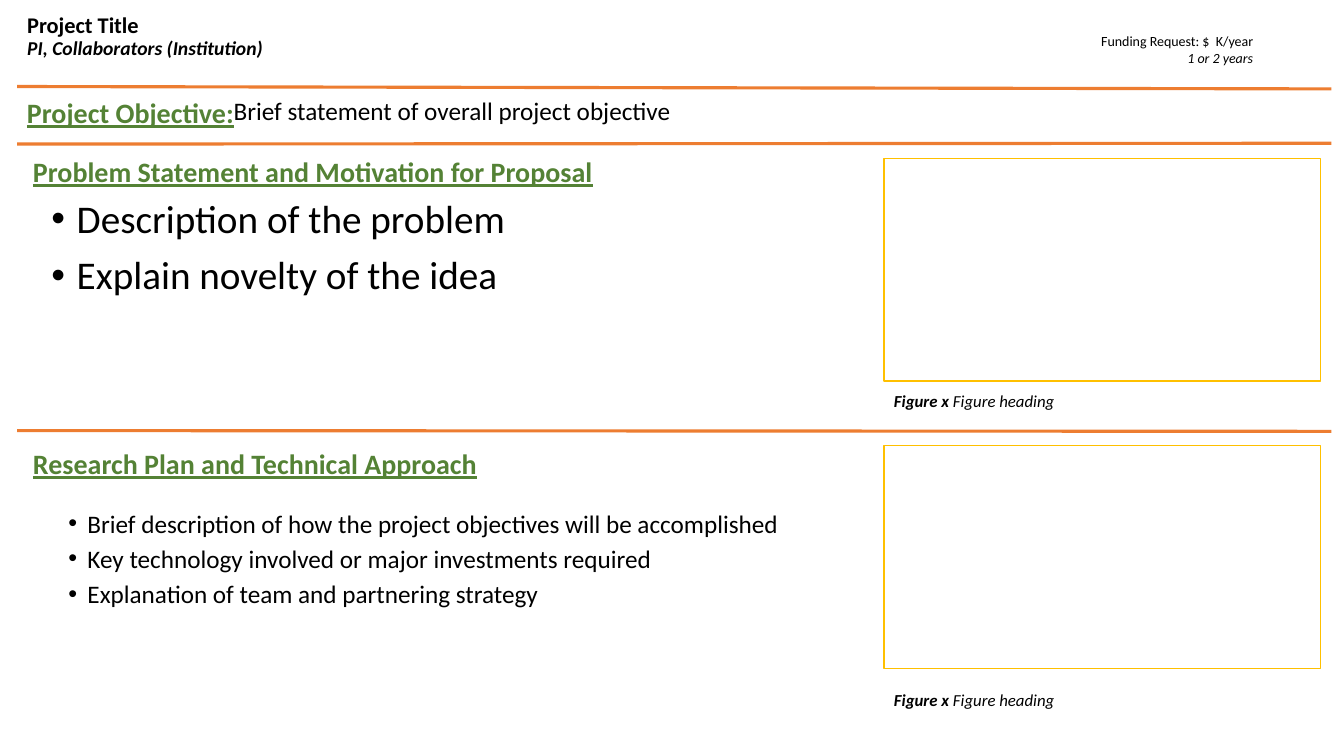
from lxml import etree
from pptx import Presentation
from pptx.dml.color import RGBColor
from pptx.enum.shapes import MSO_CONNECTOR, MSO_SHAPE
from pptx.enum.text import MSO_ANCHOR, MSO_AUTO_SIZE, PP_ALIGN
from pptx.oxml.ns import qn
from pptx.util import Cm, Pt

LEFT, RIGHT = PP_ALIGN.LEFT, PP_ALIGN.RIGHT
TOP, NO_FIT = MSO_ANCHOR.TOP, MSO_AUTO_SIZE.NONE
STRAIGHT, RECTANGLE = MSO_CONNECTOR.STRAIGHT, MSO_SHAPE.RECTANGLE
FONT = "Calibri"
COLORS = {"text": "000000", "heading": "548235", "rule": "ED7D31",
          "frame": "FFC000", "paper": "FFFFFF"}


def color(name):
    """Return the named palette colour."""
    return RGBColor.from_string(COLORS[name])


def place(shape, box):
    """Move a shape to a box given in centimetres."""
    shape.left, shape.top, shape.width, shape.height = (Cm(v) for v in box)


def add_label(slide, box):
    """Add an empty text box."""
    return slide.shapes.add_textbox(*(Cm(v) for v in box))


def write(shape, paragraphs, size=18, ink="text", align=LEFT, spacing=1.0,
          gap=0, indent=None):
    """Fill a shape with paragraphs of (text, font overrides) runs."""
    frame = shape.text_frame
    frame.word_wrap = True
    frame.auto_size = NO_FIT
    frame.vertical_anchor = TOP
    for index, runs in enumerate(paragraphs):
        paragraph = frame.add_paragraph() if index else frame.paragraphs[0]
        paragraph.alignment = align
        paragraph.line_spacing = spacing
        paragraph.space_before = Pt(gap if index else 0)
        if indent:
            properties = paragraph._p.get_or_add_pPr()
            properties.set("marL", str(Cm(indent)))
            properties.set("indent", str(-Cm(indent)))
            etree.SubElement(properties, qn("a:buFont")).set("typeface", "Arial")
            etree.SubElement(properties, qn("a:buChar")).set("char", "•")
        for text, overrides in runs:
            if text == "\n":
                paragraph.add_line_break()
                continue
            run = paragraph.add_run()
            run.text = text
            run.font.name = FONT
            run.font.size = Pt(size)
            run.font.color.rgb = color(ink)
            for attribute, value in overrides.items():
                setattr(run.font, attribute, value)


def add_heading(slide, box, text):
    """Add an underlined green heading."""
    write(add_label(slide, box), [[(text, {"bold": True, "underline": True})]],
          size=20, ink="heading")


def add_rule(slide, left, right, left_y, right_y):
    """Add an orange dividing line across the slide."""
    rule = slide.shapes.add_connector(
        STRAIGHT, Cm(right), Cm(right_y), Cm(left), Cm(left_y))
    rule.line.color.rgb = color("rule")
    rule.line.width = Pt(2.25)
    etree.SubElement(rule._element.spPr, qn("a:effectLst"))


def add_header(slide, box):
    """Place the project title and the funding request."""
    left, top, width, height = box
    title = slide.shapes.title
    place(title, (left, top, 20.27, height))
    write(title, [[("Project Title", {"bold": True}), ("\n", {}),
                   ("PI, Collaborators (Institution)",
                    {"size": Pt(14), "bold": True, "italic": True})]],
          size=16, spacing=0.9)
    funding = add_label(slide, (left + width - 5.08, top + 0.46, 5.08, 1.12))
    write(funding, [[("Funding Request: $  K/year", {})],
                    [("1 or 2 years", {"italic": True})]], size=10, align=RIGHT)


def add_objective(slide, box):
    """Place the objective heading and its statement."""
    left, top, width, height = box
    add_heading(slide, (left, top, 5.89, 1.12), "Project Objective:")
    statement = add_label(slide, (left + 5.21, top, width - 5.21, height))
    write(statement, [[("Brief statement of overall project objective", {})]])


def add_section(slide, box, heading, points, body, offset, **style):
    """Place a heading and its bullet list in the given body placeholder."""
    left, top, width, height = box
    dx, dy = offset
    add_heading(slide, (left, top, 16.33, 1.12), heading)
    place(body, (left + dx, top + dy, width - dx, height - dy))
    write(body, [[(point, {})] for point in points], **style)


def add_figure(slide, box, caption_gap):
    """Place a figure frame with its caption below."""
    left, top, width, height = box
    frame = slide.shapes.add_shape(RECTANGLE, *(Cm(v) for v in box))
    frame.shadow.inherit = False
    frame.fill.solid()
    frame.fill.fore_color.rgb = color("paper")
    frame.line.color.rgb = color("frame")
    frame.line.width = Pt(1)
    caption = add_label(slide, (left, top + height + caption_gap, 8.05, 0.76))
    write(caption, [[("Figure x", {"bold": True, "italic": True}),
                     (" Figure heading", {"italic": True})]], size=12)


def main():
    """Build and save the project proposal slide."""
    deck = Presentation()
    deck.slide_width, deck.slide_height = Cm(33.87), Cm(19.05)
    slide = deck.slides.add_slide(deck.slide_layouts[3])
    problem, plan = slide.placeholders[1], slide.placeholders[2]

    add_header(slide, (0.43, 0.23, 31.4, 1.7))
    add_objective(slide, (0.43, 2.29, 19.43, 1.35))
    for left_y, right_y in ((2.18, 2.24), (3.63, 3.61), (10.85, 10.87)):
        add_rule(slide, 0.43, 33.55, left_y, right_y)
    add_section(slide, (0.58, 3.78, 13.41, 6.38),
                "Problem Statement and Motivation for Proposal",
                ["Description of the problem", "Explain novelty of the idea"],
                problem, (0.46, 1.12), size=28, spacing=0.9, gap=10, indent=0.64)
    add_section(slide, (0.58, 11.13, 20.63, 5.73),
                "Research Plan and Technical Approach",
                ["Brief description of how the project objectives will be accomplished",
                 "Key technology involved or major investments required",
                 "Explanation of team and partnering strategy"],
                plan, (0.89, 1.54), gap=3.6, indent=0.48)
    for top, caption_gap in ((3.99, 0.13), (11.23, 0.41)):
        add_figure(slide, (22.28, top, 11, 5.61), caption_gap)
    deck.save("out.pptx")


if __name__ == "__main__":
    main()
